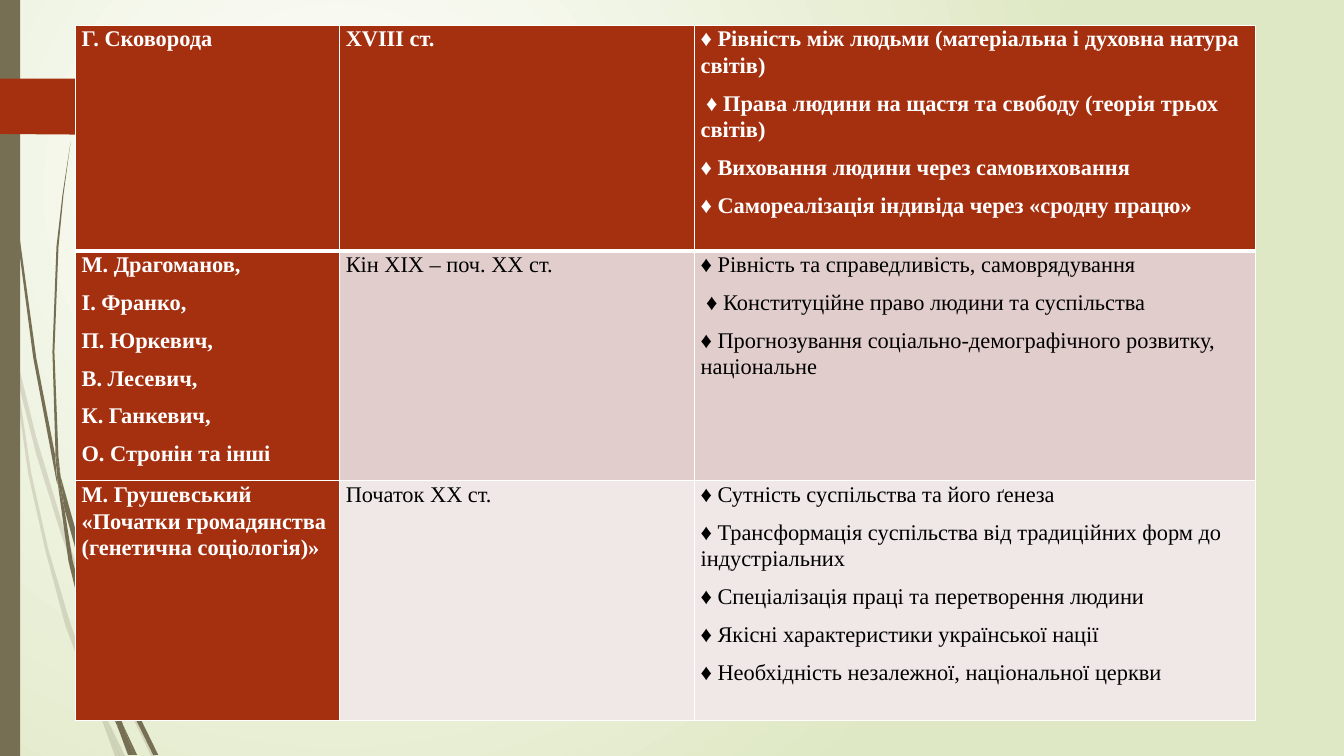
from dataclasses import dataclass

from lxml import etree
from pptx import Presentation
from pptx import util as u
from pptx.dml.color import RGBColor
from pptx.enum import shapes
from pptx.oxml.ns import qn


@dataclass(frozen=True)
class Theme:
    font: str = "Times New Roman"
    size: int = 16
    space_after: int = 8
    line_spacing: float = 1.07
    accent: str = "A53010"
    stem: str = "766F54"
    light: str = "FFFFFF"
    dark: str = "000000"
    background_edge: str = "DFE8C4"
    bands: tuple = ("A53010", "E1CDCC", "F0E8E7")
    thin: int = 1
    thick: int = 3


THEME = Theme()

PALE_STEMS = [
    [(0.11, 3.5), (0.09, 3.22), (0, 2.82), (0, 2.99), (0.1, 3.44)],
    [(0.58, 5.22), (0.84, 5.99), (0.85, 5.86), (0.62, 5.2), (0.36, 4.34), (0.14, 3.45),
     (0.17, 3.76), (0.36, 4.51)],
    [(0.92, 6.07), (0.88, 5.96), (0.88, 6.1), (1.23, 6.94), (1.5, 7.5), (1.55, 7.5), (1.27, 6.92)],
    [(1.19, 7.5), (1.24, 7.5), (1.05, 7.11)],
    [(0.93, 6.83), (0.7, 6.19), (0.48, 5.45), (0.31, 4.69), (0.17, 3.76), (0.11, 3.5), (0.28, 4.7),
     (0.45, 5.46), (0.65, 6.21), (0.92, 6.93), (1.01, 7.14), (0.99, 7.07)],
    [(0.84, 5.99), (0.87, 6.46), (0.93, 6.83), (0.96, 6.92), (1.05, 7.11), (1.03, 7.06),
     (0.91, 6.46), (0.88, 6.1), (0.88, 6.08)],
    [(0.88, 5.84), (0.95, 5.22), (1.1, 4.62), (1.6, 3.49), (2.29, 2.45), (2.68, 1.98), (2.9, 1.75),
     (3.12, 1.54), (3.12, 1.53), (2.89, 1.75), (2.68, 1.97), (2.28, 2.44), (1.58, 3.48),
     (1.07, 4.61), (0.91, 5.22), (0.85, 5.84), (0.85, 5.86), (0.88, 5.96)],
    [(1.01, 7.14), (1.14, 7.5), (1.19, 7.5)],
    [(0.88, 6.08), (0.88, 6.1), (0.88, 5.96), (0.85, 5.86), (0.84, 5.99)],
    [(0.96, 6.92), (0.93, 6.83), (0.99, 7.07), (1.01, 7.14), (1.19, 7.5), (1.05, 7.11)],
]

DARK_STEMS = [
    [(0.07, 1.1), (0.17, 2.33), (0.33, 3.55), (0.56, 4.77), (0.57, 4.81), (0.55, 4.57), (0.55, 4.53),
     (0.36, 3.55), (0.19, 2.32), (0.08, 1.09), (0.05, 0.48), (0.04, 0), (0.03, 0), (0.04, 0.48)],
    [(0.88, 5.92), (1.06, 6.45), (1.06, 6.33), (1.06, 6.31), (0.93, 5.9), (0.6, 4.72), (0.64, 5.05)],
    [(1.13, 6.49), (1.1, 6.41), (1.11, 6.56), (1.32, 7.08), (1.52, 7.49), (1.57, 7.49), (1.36, 7.06)],
    [(1.1, 6.91), (0.98, 6.57), (0.72, 5.56), (0.64, 5.05), (0.57, 4.77), (0.68, 5.57), (0.93, 6.59),
     (1.11, 7.08), (1.17, 7.22), (1.16, 7.17)],
    [(0.6, 4.72), (0.58, 4.53), (0.54, 3.49), (0.58, 2.45), (0.63, 1.93), (0.7, 1.41), (0.62, 1.93),
     (0.56, 2.45), (0.52, 3.49), (0.55, 4.49)],
    [(1.33, 7.49), (1.36, 7.49), (1.22, 7.19)],
    [(0.57, 4.77), (0.64, 5.05), (0.6, 4.72), (0.55, 4.49), (0.55, 4.53)],
    [(1.11, 6.33), (1.25, 5.52), (1.58, 4.76), (2.05, 4.06), (2.31, 3.74), (2.45, 3.59), (2.61, 3.44),
     (2.6, 3.44), (2.45, 3.58), (2.31, 3.73), (2.04, 4.05), (1.56, 4.74), (1.22, 5.51),
     (1.06, 6.31), (1.1, 6.41)],
    [(1.17, 7.22), (1.27, 7.49), (1.31, 7.49)],
    [(1.06, 6.45), (1.1, 6.91), (1.16, 7.06), (1.22, 7.19), (1.21, 7.16), (1.11, 6.56), (1.09, 6.51)],
    [(1.06, 6.45), (1.09, 6.51), (1.11, 6.56), (1.1, 6.41), (1.06, 6.31), (1.06, 6.33)],
    [(1.16, 7.06), (1.1, 6.91), (1.16, 7.17), (1.17, 7.22), (1.3, 7.49), (1.33, 7.49), (1.22, 7.19)],
]

RIBBON = [(0, 0.78), (1.46, 0.78), (1.48, 0.79), (1.73, 1.04), (1.74, 1.06), (1.73, 1.08),
          (1.48, 1.33), (1.46, 1.34), (1.36, 1.34), (0, 1.33)]

COLUMN_WIDTHS = (2.62, 3.52, 5.56)
ROW_HEIGHTS = (2.24, 2.28, 2.38)
THINKERS = [
    (["Г. Сковорода"],
     ["XVIII ст."],
     ["♦ Рівність між людьми (матеріальна і духовна натура світів)",
      " ♦ Права людини на щастя та свободу (теорія трьох світів)",
      "♦ Виховання людини через самовиховання",
      "♦ Самореалізація індивіда через «сродну працю»"]),
    (["М. Драгоманов,", "І. Франко,", "П. Юркевич,", "В. Лесевич,", "К. Ганкевич,",
      "О. Стронін та інші"],
     ["Кін XІX – поч. XX ст."],
     ["♦ Рівність та справедливість, самоврядування",
      " ♦ Конституційне право людини та суспільства",
      "♦ Прогнозування соціально-демографічного розвитку, національне"]),
    (["М. Грушевський «Початки громадянства (генетична соціологія)»"],
     ["Початок XX ст."],
     ["♦ Сутність суспільства та його ґенеза",
      "♦ Трансформація суспільства від традиційних форм до індустріальних",
      "♦ Спеціалізація праці та перетворення людини",
      "♦ Якісні характеристики української нації",
      "♦ Необхідність незалежної, національної церкви"]),
]


def set_background(slide):
    """Fill the slide with a gradient spreading from its upper left."""
    fill = slide.background.fill
    fill.gradient()
    for stop, color in zip(fill.gradient_stops, (THEME.light, THEME.background_edge)):
        stop.color.rgb = RGBColor.from_string(color)
    linear = slide.element.find(".//" + qn("a:lin"))
    radial = etree.Element(qn("a:path"), {"path": "circle"})
    etree.SubElement(radial, qn("a:fillToRect"), l="50000", t="50000", r="100000", b="100000")
    linear.getparent().replace(linear, radial)


def paint(shape, color, opacity=100):
    shape.shadow.inherit = False
    shape.line.fill.background()
    shape.fill.solid()
    shape.fill.fore_color.rgb = RGBColor.from_string(color)
    if opacity < 100:
        rgb = shape.element.spPr.find(qn("a:solidFill")).find(qn("a:srgbClr"))
        etree.SubElement(rgb, qn("a:alpha"), val=str(opacity * 1000))


def add_outline(container, points, color, opacity=100):
    corners = [(u.Inches(x), u.Inches(y)) for x, y in points]
    builder = container.build_freeform(*corners[0])
    builder.add_line_segments(corners[1:])
    paint(builder.convert_to_shape(), color, opacity)


def add_stems(slide, stems, opacity=100):
    group = slide.shapes.add_group_shape()
    for stem in stems:
        add_outline(group.shapes, stem, THEME.stem, opacity)


def add_side_bar(slide):
    bar = slide.shapes.add_shape(shapes.MSO_SHAPE.RECTANGLE, 0, 0, u.Inches(0.2), u.Inches(7.5))
    paint(bar, THEME.stem)


def set_borders(cell, top, bottom):
    properties = cell._tc.get_or_add_tcPr()
    for side, points in (("L", THEME.thin), ("R", THEME.thin), ("T", top), ("B", bottom)):
        line = etree.SubElement(properties, qn("a:ln" + side), w=str(u.Pt(points)))
        fill = etree.SubElement(line, qn("a:solidFill"))
        etree.SubElement(fill, qn("a:srgbClr"), val=THEME.light)


def write_cell(cell, lines, color, bold):
    cell.margin_left = cell.margin_right = u.Inches(0.06)
    cell.margin_top = cell.margin_bottom = 0
    frame = cell.text_frame
    for index, line in enumerate(lines):
        paragraph = frame.add_paragraph() if index else frame.paragraphs[0]
        paragraph.line_spacing = THEME.line_spacing
        paragraph.space_after = u.Pt(THEME.space_after)
        run = paragraph.add_run()
        run.text = line
        run.font.name = THEME.font
        run.font.size = u.Pt(THEME.size)
        run.font.bold = bold
        run.font.color.rgb = RGBColor.from_string(color)


def add_thinkers_table(slide):
    frame = slide.shapes.add_table(len(ROW_HEIGHTS), len(COLUMN_WIDTHS), u.Inches(0.75), u.Inches(0.25),
                                   u.Inches(sum(COLUMN_WIDTHS)), u.Inches(sum(ROW_HEIGHTS)))
    table = frame.table
    table.horz_banding = False
    for column, width in zip(table.columns, COLUMN_WIDTHS):
        column.width = u.Inches(width)
    for row, (height, contents) in enumerate(zip(ROW_HEIGHTS, THINKERS)):
        table.rows[row].height = u.Inches(height)
        for column, lines in enumerate(contents):
            cell = table.cell(row, column)
            heading = row == 0 or column == 0
            set_borders(cell, top=THEME.thick if row == 1 else THEME.thin,
                        bottom=THEME.thick if row == 0 else THEME.thin)
            cell.fill.solid()
            cell.fill.fore_color.rgb = RGBColor.from_string(THEME.accent if heading else THEME.bands[row])
            write_cell(cell, lines, THEME.light if heading else THEME.dark, heading)


def main():
    presentation = Presentation()
    presentation.slide_width = u.Inches(13.33)
    presentation.slide_height = u.Inches(7.5)
    slide = presentation.slides.add_slide(presentation.slide_layouts[6])
    set_background(slide)
    add_stems(slide, PALE_STEMS, opacity=20)
    add_stems(slide, DARK_STEMS)
    add_side_bar(slide)
    add_outline(slide.shapes, RIBBON, THEME.accent)
    add_thinkers_table(slide)
    presentation.save("out.pptx")


if __name__ == "__main__":
    main()
